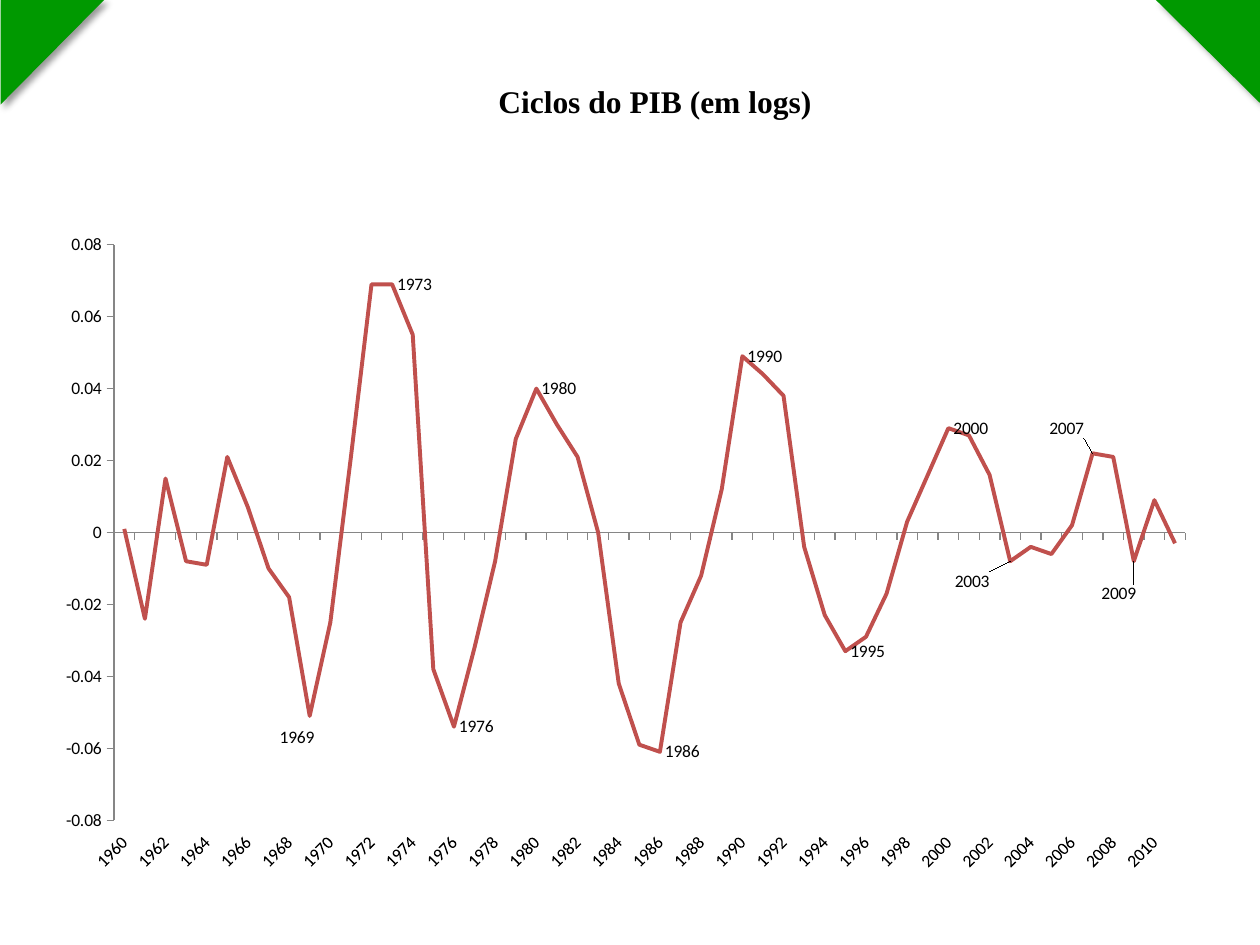
from lxml import etree
from pptx import Presentation
from pptx.chart.data import CategoryChartData
from pptx.dml.color import RGBColor
from pptx.enum.chart import XL_CHART_TYPE as CT, XL_LABEL_POSITION as LP
from pptx.enum.chart import XL_TICK_LABEL_POSITION as TLP, XL_TICK_MARK as TM
from pptx.enum.shapes import MSO_SHAPE as SHAPE
from pptx.enum.text import MSO_ANCHOR, MSO_AUTO_SIZE, PP_ALIGN
from pptx.oxml import parse_xml
from pptx.oxml.ns import nsdecls, qn
from pptx.util import Pt

PX = 914400 // 126
BLACK = RGBColor(0x00, 0x00, 0x00)
GREEN = RGBColor(0x00, 0x99, 0x00)
RED = RGBColor(0xC0, 0x50, 0x4D)
GRAY = RGBColor(0x86, 0x86, 0x86)
CHART_W, CHART_H = 1208, 745


def set_font(font, name="Calibri", size=10, bold=False, color=BLACK):
    font.name = name
    font.size = Pt(size)
    font.bold = bold
    font.color.rgb = color


def manual_layout(**values):
    items = "".join(f'<c:{k} val="{v}"/>' for k, v in values.items())
    return parse_xml(f'<c:layout {nsdecls("c")}><c:manualLayout>{items}</c:manualLayout></c:layout>')


prs = Presentation()
prs.slide_width, prs.slide_height = 1260 * PX, 945 * PX
s = prs.slides.add_slide(prs.slide_layouts[5])

title = s.shapes.title
title.left, title.top, title.width, title.height = [v * PX for v in (134, 76, 1042, 50)]
tf = title.text_frame
tf.word_wrap = True
tf.auto_size = MSO_AUTO_SIZE.SHAPE_TO_FIT_TEXT
tf.vertical_anchor = MSO_ANCHOR.TOP
p = tf.paragraphs[0]
p.alignment = PP_ALIGN.CENTER
r = p.add_run()
r.text = "Ciclos do PIB (em logs)"
set_font(r.font, "Times New Roman", 18, True)

for left, rotation in ((0, 90), (1156, 180)):
    sp = s.shapes.add_shape(SHAPE.RIGHT_TRIANGLE, left * PX, 0, 105 * PX, 104 * PX)
    sp.rotation = rotation
    sp.fill.solid()
    sp.fill.fore_color.rgb = GREEN
    sp.line.fill.background()
    sp.shadow.inherit = False
    effects = sp._element.spPr.find(qn("a:effectLst"))
    effects.append(parse_xml(
        f'<a:outerShdw {nsdecls("a")} blurRad="50800" dist="38100" dir="2700000" '
        'algn="tl" rotWithShape="0"><a:srgbClr val="000000"><a:alpha val="40000"/>'
        '</a:srgbClr></a:outerShdw>'))

values = [
    0.001, -0.024, 0.015, -0.008, -0.009, 0.021, 0.007, -0.01, -0.018, -0.051,
    -0.025, 0.021, 0.069, 0.069, 0.055, -0.038, -0.054, -0.032, -0.008, 0.026,
    0.04, 0.03, 0.021, 0, -0.042, -0.059, -0.061, -0.025, -0.012, 0.012,
    0.049, 0.044, 0.038, -0.004, -0.023, -0.033, -0.029, -0.017, 0.003, 0.016,
    0.029, 0.027, 0.016, -0.008, -0.004, -0.006, 0.002, 0.022, 0.021, -0.008,
    0.009, -0.003,
]
data = CategoryChartData()
data.categories = [str(1960 + i) for i in range(len(values))]
data.add_series("Series 1", values)
chart = s.shapes.add_chart(CT.LINE, 15 * PX, 126 * PX, CHART_W * PX, CHART_H * PX, data).chart
chart.has_legend = False
chart.has_title = False
set_font(chart.font)

plot_area = chart._chartSpace.chart.plotArea
for old in plot_area.findall(qn("c:layout")):
    plot_area.remove(old)
plot_area.insert(0, manual_layout(
    layoutTarget="inner", xMode="edge", yMode="edge", x=0.082, y=0.16, w=0.887, h=0.775))

cat_axis, val_axis = chart.category_axis, chart.value_axis
for axis in (cat_axis, val_axis):
    axis.has_major_gridlines = False
    axis.major_tick_mark = TM.OUTSIDE
    axis.minor_tick_mark = TM.NONE
    axis.format.line.color.rgb = GRAY
    axis.format.line.width = Pt(0.75)
    set_font(axis.tick_labels.font)
cat_axis.tick_label_position = TLP.LOW
cat_axis._element.find(qn("c:txPr")).find(qn("a:bodyPr")).set("rot", "-2700000")
val_axis.minimum_scale, val_axis.maximum_scale = -0.08, 0.08
val_axis.major_unit = 0.02
val_axis.tick_labels.number_format = "General"
val_axis.tick_labels.number_format_is_linked = False

series = chart.plots[0].series[0]
series.smooth = False
series.format.line.color.rgb = RED
series.format.line.width = Pt(2.25)
series.data_labels.show_value = False

turning_years = (1969, 1973, 1976, 1980, 1986, 1990, 1995, 2000, 2003, 2007, 2009)
label_shifts = {1969: (-35, 31), 2003: (-60, 20), 2007: (-48, -25), 2009: (-37, 33)}
for year in turning_years:
    label = series.points[year - 1960].data_label
    p = label.text_frame.paragraphs[0]
    r = p.add_run()
    r.text = f"{year}\n" if year == 1969 else str(year)
    set_font(r.font)
    label.position = LP.RIGHT

labels = series.data_labels._element
for label in labels.findall(qn("c:dLbl")):
    idx = label.find(qn("c:idx"))
    year = 1960 + int(idx.get("val"))
    if year in label_shifts:
        dx, dy = label_shifts[year]
        idx.addnext(manual_layout(x=round(dx / CHART_W, 3), y=round(dy / CHART_H, 3)))

C15 = "http://schemas.microsoft.com/office/drawing/2012/chart"
ext = etree.SubElement(etree.SubElement(labels, qn("c:extLst")), qn("c:ext"))
ext.set("uri", "{CE6537A1-D6FC-4f65-9D91-7224C49458BB}")
etree.SubElement(ext, f"{{{C15}}}showLeaderLines", nsmap={"c15": C15}).set("val", "1")

prs.save("out.pptx")
